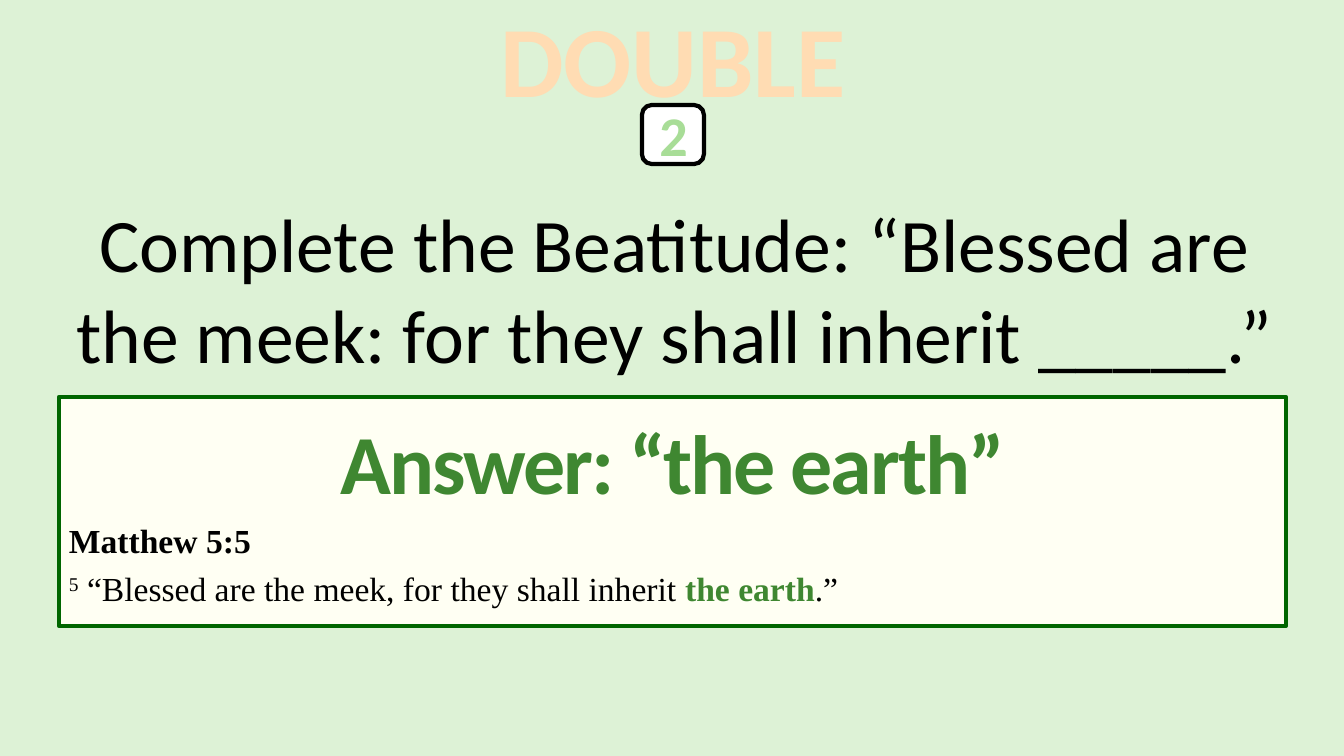
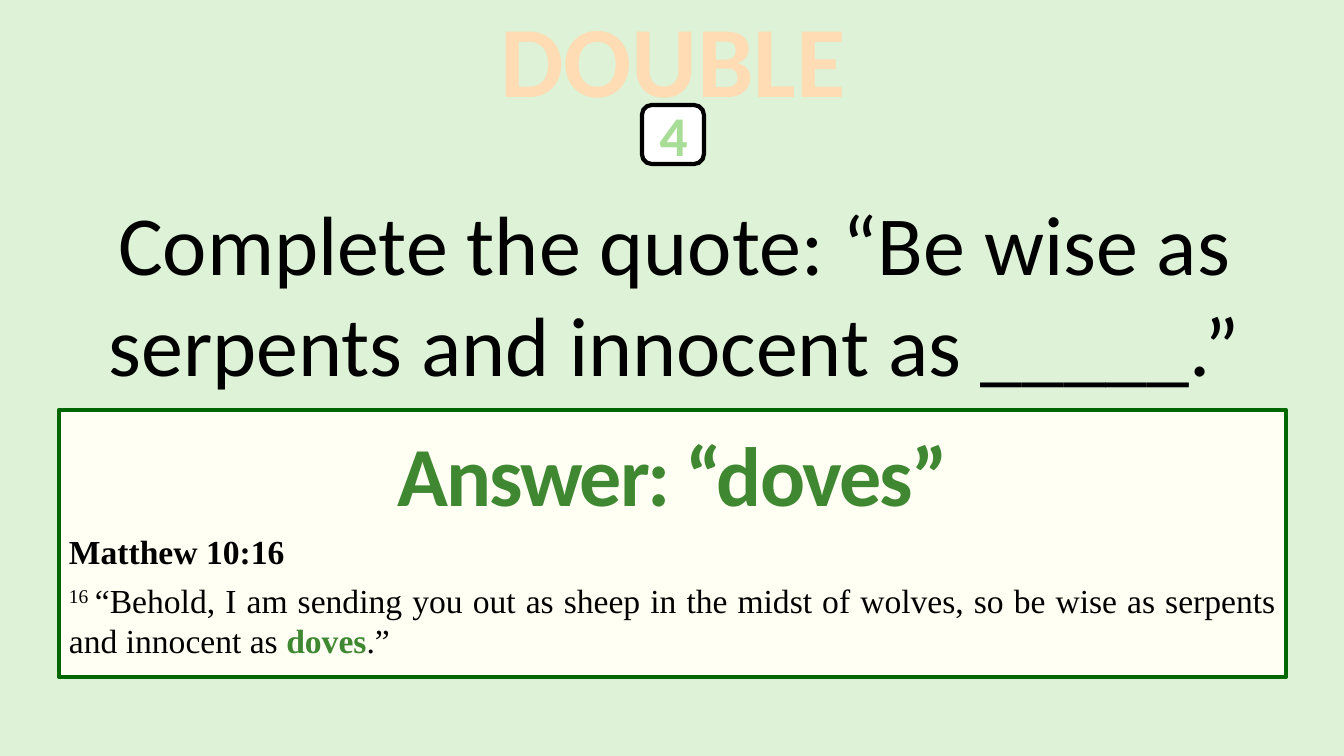
from pptx import Presentation
from pptx.dml.color import RGBColor
from pptx.enum import shapes, text
from pptx.oxml import parse_xml
from pptx.oxml.ns import nsdecls
from pptx import util as u

EMU_PER_PX = 914400 / 100.8
PAGE = (1344, 756)

MINT, PEACH, LIME = "DDF2D6", "FFDCB3", "A8DD97"
CREAM, FOREST, GREEN = "FFFFF3", "006600", "3F8731"
BLACK, WHITE = "000000", "FFFFFF"

CENTER, LEFT, JUSTIFY = (
    text.PP_ALIGN.CENTER, text.PP_ALIGN.LEFT, text.PP_ALIGN.JUSTIFY)

HEADING = dict(size=72, bold=True, color=PEACH, outlined=True)
NUMBER = dict(size=40, bold=True, color=LIME, outlined=True)
ANSWER = dict(size=60, bold=True, color=GREEN, spc=-150)
VERSE = dict(size=24, name="Times New Roman")
VERSE_BOLD = dict(VERSE, bold=True)
VERSE_MARK = dict(VERSE, baseline=30000)
VERSE_KEY = dict(VERSE_BOLD, color=GREEN)

QUESTIONS = [
    dict(number="2",
         question="Complete the Beatitude: “Blessed are the meek: "
                  "for they shall inherit _____.”",
         size=54, question_box=(55, 192, 1239, 194),
         answer="the earth", answer_box=(59, 397, 1227, 229),
         source="Matthew 5:5", mark="5",
         verse=" “Blessed are the meek, for they shall inherit "),
    dict(number="4",
         question="Complete the quote: “Be wise as serpents "
                  "and innocent as _____.”",
         size=60, question_box=(55, 187, 1239, 214),
         answer="doves", answer_box=(59, 410, 1227, 267),
         source="Matthew 10:16", mark="16 ",
         verse="“Behold, I am sending you out as sheep in the midst of "
               "wolves, so be wise as serpents and innocent as "),
]


def px(length):
    return u.Emu(round(length * EMU_PER_PX))


def rgb(color):
    return RGBColor.from_string(color)


def set_all(target, **values):
    for name, value in values.items():
        setattr(target, name, value)


def add_span(para, words, size, name="Calibri", color=BLACK, bold=False,
             outlined=False, **extras):
    """Add a run; extras are run attributes such as spc and baseline."""
    span = para.add_run()
    span.text = words
    set_all(span.font, size=u.Pt(size), name=name, bold=bold)
    span.font.color.rgb = rgb(color)
    properties = span._r.get_or_add_rPr()
    for key, value in extras.items():
        properties.set(key, str(value))
    if outlined:
        properties.insert(0, parse_xml(
            f'<a:ln {nsdecls("a")} w="28575"><a:solidFill>'
            f'<a:srgbClr val="{BLACK}"/></a:solidFill></a:ln>'))


def add_label(page, box, words, wrap=True, **style):
    frame = page.shapes.add_textbox(*map(px, box)).text_frame
    frame.word_wrap = wrap
    para = frame.paragraphs[0]
    para.alignment = CENTER
    add_span(para, words, **style)


def add_panel(page, kind, box, fill, line):
    panel = page.shapes.add_shape(kind, *map(px, box))
    panel.shadow.inherit = False
    panel.fill.solid()
    panel.fill.fore_color.rgb = rgb(fill)
    panel.line.color.rgb = rgb(line)
    panel.line.width = u.Pt(3)
    return panel


def add_header(page, box, number):
    """Place the number badge and the heading above it."""
    left, top, width, height = box
    middle = left + width // 2
    add_panel(page, shapes.MSO_SHAPE.ROUNDED_RECTANGLE,
              (middle - 31, top + 113, 62, 59), WHITE, BLACK)
    add_label(page, (left, top, width, 132), "DOUBLE", wrap=False, **HEADING)
    add_label(page, (middle - 24, top + 104, 49, 78), number, wrap=False,
              **NUMBER)


def add_answer(page, box, answer, source, mark, verse):
    panel = add_panel(page, shapes.MSO_SHAPE.RECTANGLE, box, CREAM, FOREST)
    frame = panel.text_frame
    set_all(frame, word_wrap=True, margin_top=px(21), margin_bottom=px(5),
            vertical_anchor=text.MSO_ANCHOR.MIDDLE)
    paragraphs = [
        (dict(alignment=CENTER, line_spacing=0.8, space_after=u.Pt(6)),
         [(f"Answer: “{answer}”", ANSWER)]),
        (dict(alignment=LEFT, space_after=u.Pt(6)), [(source, VERSE_BOLD)]),
        (dict(alignment=JUSTIFY),
         [(mark, VERSE_MARK), (verse, VERSE), (answer, VERSE_KEY),
          (".”", VERSE)]),
    ]
    for index, (layout, spans) in enumerate(paragraphs):
        para = frame.add_paragraph() if index else frame.paragraphs[0]
        set_all(para, **layout)
        for words, style in spans:
            add_span(para, words, **style)


def add_question_page(deck, number, question, size, question_box, answer_box,
                      **answer_parts):
    page = deck.slides.add_slide(deck.slide_layouts[6])
    page.background.fill.solid()
    page.background.fill.fore_color.rgb = rgb(MINT)
    add_header(page, (488, -8, 370, 182), number)
    add_label(page, question_box, question, size=size)
    add_answer(page, answer_box, **answer_parts)


def main():
    deck = Presentation()
    deck.slide_width, deck.slide_height = map(px, PAGE)
    for entry in QUESTIONS:
        add_question_page(deck, **entry)
    deck.save("out.pptx")


if __name__ == "__main__":
    main()
